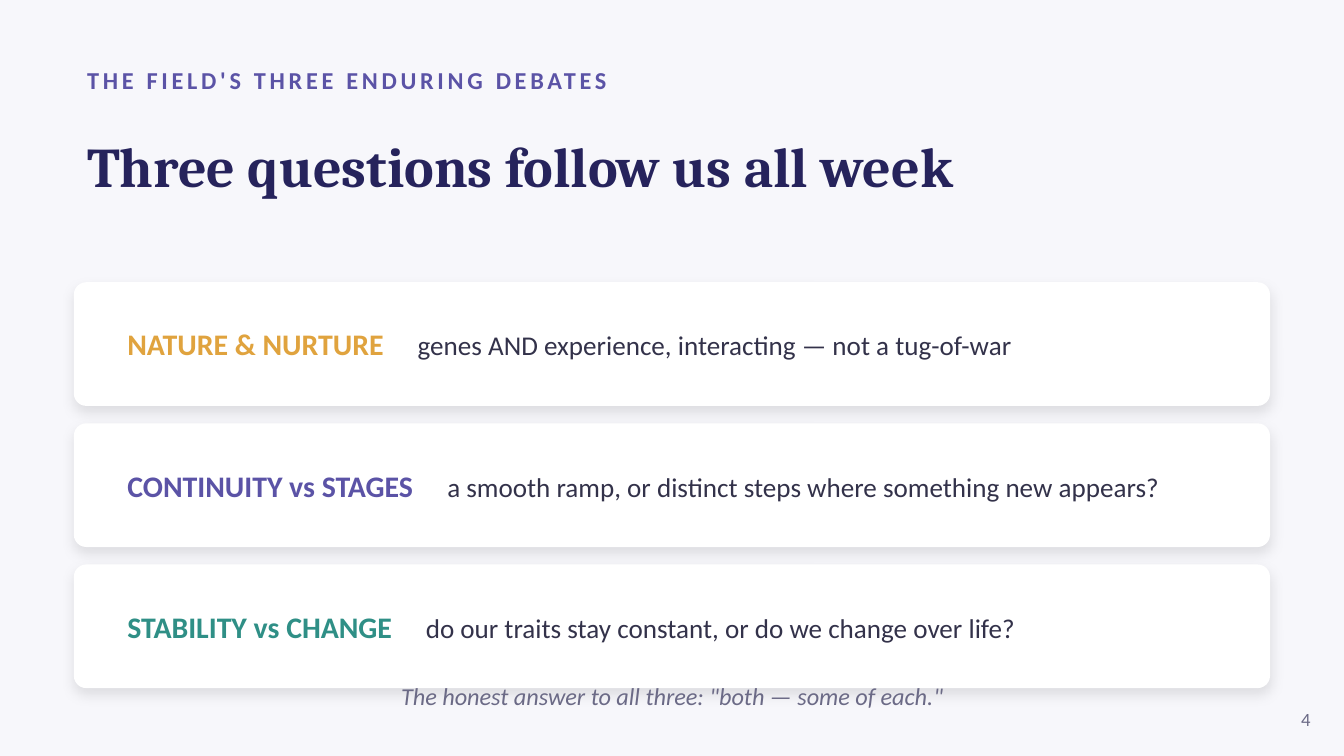
from lxml.etree import SubElement
from pptx import Presentation
from pptx.dml.color import RGBColor
from pptx.enum.shapes import MSO_SHAPE
from pptx.enum.text import MSO_ANCHOR, PP_ALIGN
from pptx.oxml import parse_xml
from pptx.oxml.ns import qn
from pptx.util import Inches, Pt

CELL = Inches(0.1)  # the slide is a grid of 100 columns
LEFT, WIDTH = 5.5, 89
INDIGO, NAVY, INK, GREY = "5B53A6", "26235C", "33324A", "6B6A86"

SHADOW = (
    '<a:effectLst xmlns:a="http://schemas.openxmlformats.org/drawingml/2006/main">'
    f'<a:outerShdw blurRad="{Pt(7)}" dist="{Pt(3)}" dir="5400000" rotWithShape="0">'
    '<a:srgbClr val="000000"><a:alpha val="10000"/></a:srgbClr>'
    "</a:outerShdw></a:effectLst>"
)


def style(font, size, color, name="Calibri", bold=False, italic=False):
    font.name, font.size, font.bold, font.italic = name, Pt(size), bold, italic
    font.color.rgb = RGBColor.from_string(color)


def add_line(column, row, columns, rows, align=PP_ALIGN.LEFT):
    box = slide.shapes.add_textbox(*(int(n * CELL) for n in (column, row, columns, rows)))
    box.text_frame.word_wrap = True
    box.text_frame.vertical_anchor = MSO_ANCHOR.MIDDLE
    paragraph = box.text_frame.paragraphs[0]
    paragraph.alignment = align
    return paragraph


deck = Presentation()
deck.slide_width, deck.slide_height = int(100 * CELL), int(56.25 * CELL)
slide = deck.slides.add_slide(deck.slide_layouts[6])
slide.background.fill.solid()
slide.background.fill.fore_color.rgb = RGBColor.from_string("F7F7FB")

# Heading
kicker = add_line(LEFT, 4.2, 90, 3.5)
kicker_run = kicker.add_run()
kicker_run.text = "THE FIELD'S THREE ENDURING DEBATES"
kicker_run.font._element.set("spc", "200")
style(kicker.font, 13, INDIGO, bold=True)

title = add_line(LEFT, 7.8, WIDTH, 9)
title.add_run().text = "Three questions follow us all week"
style(title.font, 30, NAVY, name="Cambria", bold=True)

# Debate cards: label, colour, tab stop of the question in inches, question
debates = [
    ("NATURE & NURTURE", "E0A33E", 2.16,
     "genes AND experience, interacting — not a tug-of-war"),
    ("CONTINUITY vs STAGES", INDIGO, 2.38,
     "a smooth ramp, or distinct steps where something new appears?"),
    ("STABILITY vs CHANGE", "2F8F86", 2.22,
     "do our traits stay constant, or do we change over life?"),
]
for index, (label, color, stop, question) in enumerate(debates):
    top = 21 + 10.5 * index
    card = slide.shapes.add_shape(
        MSO_SHAPE.ROUNDED_RECTANGLE, *(int(n * CELL) for n in (LEFT, top, WIDTH, 9.2)))
    card.adjustments[0] = 0.1
    card.fill.solid()
    card.fill.fore_color.rgb = RGBColor.from_string("FFFFFF")
    card.line.fill.background()
    card._element.spPr.append(parse_xml(SHADOW))

    debate = add_line(LEFT + 3, top + 1.6, WIDTH - 6, 6)
    tabs = SubElement(debate._p.get_or_add_pPr(), qn("a:tabLst"))
    SubElement(tabs, qn("a:tab"), pos=str(Inches(stop)), algn="l")
    label_run, question_run = debate.add_run(), debate.add_run()
    label_run.text = label.replace(" ", " ") + "\t"  # en spaces set the words apart
    question_run.text = question
    style(label_run.font, 16, color, bold=True)
    style(question_run.font, 14.5, INK)

# Closing remark and page number
closing = add_line(LEFT, 50, WIDTH, 3.5, PP_ALIGN.CENTER)
closing.add_run().text = 'The honest answer to all three: "both — some of each."'
style(closing.font, 13, GREY, italic=True)

page_number = add_line(93.5, 52, 5, 3, PP_ALIGN.RIGHT)
page_number.add_run().text = "4"
style(page_number.font, 10, GREY)

deck.save("out.pptx")
